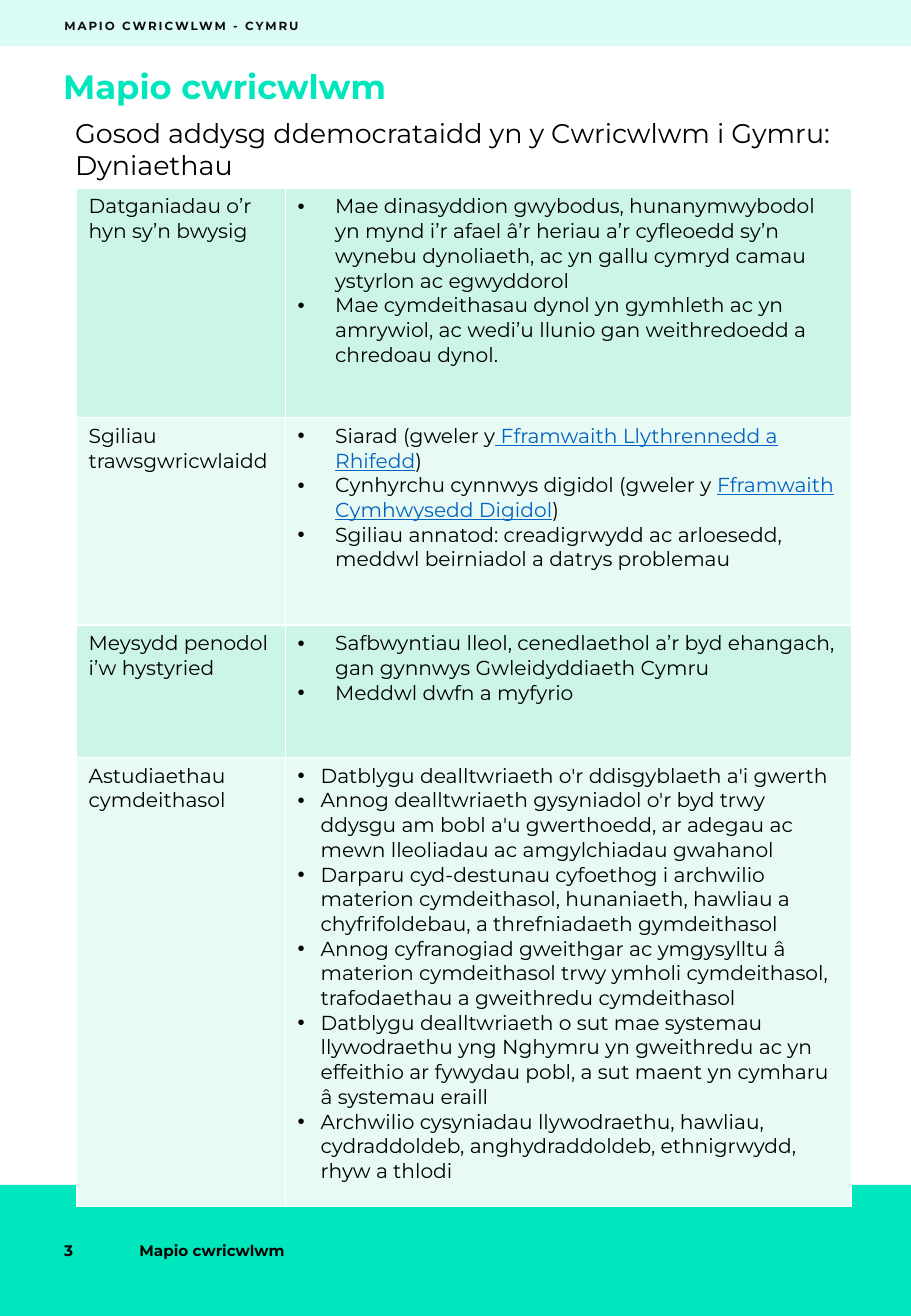
from dataclasses import dataclass

from lxml import etree
from pptx import Presentation
from pptx.dml.color import RGBColor
from pptx.enum.shapes import MSO_SHAPE
from pptx.enum.text import MSO_ANCHOR
from pptx.oxml.ns import qn
from pptx.slide import Slide
from pptx.table import _Cell
from pptx.text.text import TextFrame, _Paragraph
from pptx.util import Inches, Pt

RECTANGLE = MSO_SHAPE.RECTANGLE
TOP = MSO_ANCHOR.TOP
MIDDLE = MSO_ANCHOR.MIDDLE


@dataclass(frozen=True)
class Theme:
    font: str = "Montserrat"
    teal: str = "00E7BD"
    black: str = "000000"
    header: str = "0D0D0D"
    white: str = "FFFFFF"
    link: str = "0563C1"
    row_fills: tuple[str, str] = ("CCF5E8", "E7FAF4")
    title_size: float = 20
    subtitle_size: float = 16
    table_size: float = 12
    footer_size: float = 9
    header_size: float = 7


THEME = Theme()


@dataclass(frozen=True)
class Band:
    top: float
    height: float
    opacity: int = 100


@dataclass(frozen=True)
class Label:
    text: str
    left: float
    top: float
    width: float
    height: float
    size: float
    color: str = THEME.black
    bold: bool = True
    anchor: MSO_ANCHOR = MIDDLE
    inset: bool = True
    tracking: float = 0


@dataclass(frozen=True)
class Span:
    text: str
    linked: bool = False


@dataclass(frozen=True)
class Topic:
    heading: str
    height: float
    indent: float
    points: tuple[tuple[Span, ...], ...]


def plain(*texts: str) -> tuple[tuple[Span, ...], ...]:
    return tuple((Span(text),) for text in texts)


BANDS = (Band(0, 0.38, 14), Band(9.76, 1.08))

LABELS = (
    Label("3", 0.43, 9.76, 0.62, 1.08, THEME.footer_size),
    Label("Mapio cwricwlwm", 1.05, 9.76, 2.77, 1.08, THEME.footer_size),
    Label("Mapio cwricwlwm", 0.52, 0.54, 6.46, 0.37, THEME.title_size,
          THEME.teal, anchor=TOP, inset=False),
    Label("Gosod addysg ddemocrataidd yn y Cwricwlwm i Gymru: Dyniaethau",
          0.52, 0.91, 6.69, 0.64, THEME.subtitle_size, bold=False, anchor=TOP),
    Label("MAPIO CWRICWLWM - CYMRU", 0.53, 0.07, 2.7, 0.28, THEME.header_size,
          THEME.header, inset=False, tracking=1.2),
)

COLUMN_WIDTHS = (1.72, 4.66)

TOPICS = (
    Topic("Datganiadau o’r hyn sy’n bwysig", 1.89, 0.31, plain(
        "Mae dinasyddion gwybodus, hunanymwybodol yn mynd i’r afael â’r heriau a’r cyfleoedd "
        "sy’n wynebu dynoliaeth, ac yn gallu cymryd camau ystyrlon ac egwyddorol",
        "Mae cymdeithasau dynol yn gymhleth ac yn amrywiol, ac wedi’u llunio gan weithredoedd "
        "a chredoau dynol.",
    )),
    Topic("Sgiliau trawsgwricwlaidd", 1.71, 0.31, (
        (Span("Siarad (gweler y"), Span(" Fframwaith Llythrennedd a Rhifedd", True), Span(")")),
        (Span("Cynhyrchu cynnwys digidol (gweler y "),
         Span("Fframwaith Cymhwysedd Digidol", True), Span(")")),
        (Span("Sgiliau annatod: creadigrwydd ac arloesedd, meddwl beirniadol "
              "a datrys problemau"),),
    )),
    Topic("Meysydd penodol i’w hystyried", 1.09, 0.31, plain(
        "Safbwyntiau lleol, cenedlaethol a’r byd ehangach, gan gynnwys Gwleidyddiaeth Cymru",
        "Meddwl dwfn a myfyrio",
    )),
    Topic("Astudiaethau cymdeithasol", 3.7, 0.19, plain(
        "Datblygu dealltwriaeth o'r ddisgyblaeth a'i gwerth",
        "Annog dealltwriaeth gysyniadol o'r byd trwy ddysgu am bobl a'u gwerthoedd, ar adegau "
        "ac mewn lleoliadau ac amgylchiadau gwahanol",
        "Darparu cyd-destunau cyfoethog i archwilio materion cymdeithasol, hunaniaeth, hawliau "
        "a chyfrifoldebau, a threfniadaeth gymdeithasol",
        "Annog cyfranogiad gweithgar ac ymgysylltu â materion cymdeithasol trwy ymholi "
        "cymdeithasol, trafodaethau a gweithredu cymdeithasol",
        "Datblygu dealltwriaeth o sut mae systemau llywodraethu yng Nghymru yn gweithredu ac "
        "yn effeithio ar fywydau pobl, a sut maent yn cymharu â systemau eraill",
        "Archwilio cysyniadau llywodraethu, hawliau, cydraddoldeb, anghydraddoldeb, "
        "ethnigrwydd, rhyw a thlodi",
    )),
)


def style(para: _Paragraph, size: float, color: str = THEME.black, bold: bool = False) -> None:
    para.font.name = THEME.font
    para.font.size = Pt(size)
    para.font.bold = bold
    para.font.color.rgb = RGBColor.from_string(color)


def draw_band(page: Slide, band: Band) -> None:
    box = page.shapes.add_shape(
        RECTANGLE, 0, Inches(band.top), Inches(7.5), Inches(band.height))
    box.shadow.inherit = False
    box.line.fill.background()
    box.fill.solid()
    box.fill.fore_color.rgb = RGBColor.from_string(THEME.teal)
    if band.opacity < 100:
        color = box.fill._xPr.find(qn("a:solidFill"))[0]
        etree.SubElement(color, qn("a:alpha"), val=str(band.opacity * 1000))


def draw_label(page: Slide, label: Label) -> None:
    box = page.shapes.add_textbox(
        Inches(label.left), Inches(label.top), Inches(label.width), Inches(label.height))
    frame = box.text_frame
    frame.word_wrap = True
    frame.vertical_anchor = label.anchor
    if not label.inset:
        frame.margin_left = frame.margin_right = frame.margin_top = frame.margin_bottom = 0
    para = frame.paragraphs[0]
    span = para.add_run()
    span.text = label.text
    style(para, label.size, label.color, label.bold)
    if label.tracking:
        span._r.get_or_add_rPr().set("spc", str(round(label.tracking * 100)))


def write_points(frame: TextFrame, topic: Topic) -> None:
    for index, point in enumerate(topic.points):
        para = frame.add_paragraph() if index else frame.paragraphs[0]
        properties = para._p.get_or_add_pPr()
        properties.set("marL", str(Inches(topic.indent)))
        properties.set("indent", str(-Inches(topic.indent)))
        etree.SubElement(properties, qn("a:buFont"), typeface="Arial")
        etree.SubElement(properties, qn("a:buChar"), char="•")
        style(para, THEME.table_size)
        for part in point:
            span = para.add_run()
            span.text = part.text
            if part.linked:
                span.font.underline = True
                span.font.color.rgb = RGBColor.from_string(THEME.link)


def style_cell(cell: _Cell, fill: str) -> None:
    properties = cell._tc.get_or_add_tcPr()
    for side in ("lnL", "lnR", "lnT", "lnB"):
        border = etree.SubElement(properties, qn(f"a:{side}"), w=str(Pt(1)))
        paint = etree.SubElement(border, qn("a:solidFill"))
        etree.SubElement(paint, qn("a:srgbClr"), val=THEME.white)
    cell.fill.solid()
    cell.fill.fore_color.rgb = RGBColor.from_string(fill)


def draw_topics(page: Slide) -> None:
    height = sum(topic.height for topic in TOPICS)
    table = page.shapes.add_table(
        len(TOPICS), len(COLUMN_WIDTHS), Inches(0.63), Inches(1.55),
        Inches(sum(COLUMN_WIDTHS)), Inches(height)).table
    table.first_row = table.horz_banding = False
    for column, width in zip(table.columns, COLUMN_WIDTHS):
        column.width = Inches(width)
    for index, topic in enumerate(TOPICS):
        row = table.rows[index]
        row.height = Inches(topic.height)
        heading, points = row.cells
        for cell in (heading, points):
            style_cell(cell, THEME.row_fills[index % 2])
        heading.text = topic.heading
        style(heading.text_frame.paragraphs[0], THEME.table_size)
        write_points(points.text_frame, topic)


def main() -> None:
    deck = Presentation()
    deck.slide_width, deck.slide_height = Inches(7.5), Inches(10.84)
    page = deck.slides.add_slide(deck.slide_layouts[6])
    for band in BANDS:
        draw_band(page, band)
    for label in LABELS:
        draw_label(page, label)
    draw_topics(page)
    deck.save("out.pptx")


if __name__ == "__main__":
    main()
